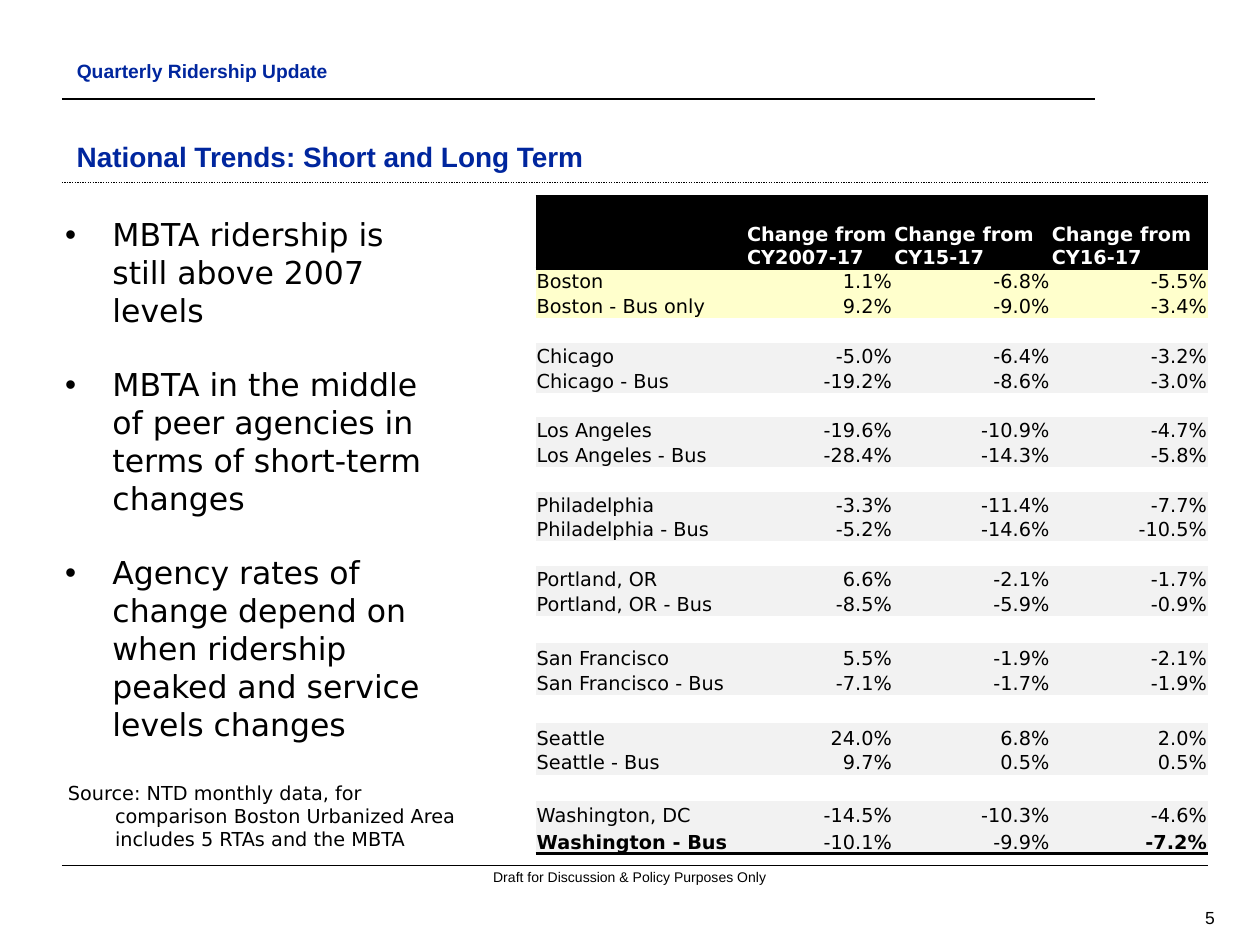
from lxml.etree import SubElement
from pptx import Presentation
from pptx.dml.color import RGBColor
from pptx.enum.dml import MSO_LINE
from pptx.enum.shapes import MSO_CONNECTOR
from pptx.enum.text import MSO_ANCHOR, PP_ALIGN
from pptx.oxml.ns import qn
from pptx.util import Pt

BLACK = RGBColor(0x00, 0x00, 0x00)
WHITE = RGBColor(0xFF, 0xFF, 0xFF)
NAVY = RGBColor(0x00, 0x26, 0x9E)
YELLOW = RGBColor(0xFF, 0xFF, 0xCC)
GREY = RGBColor(0xF2, 0xF2, 0xF2)

HEADING_FONT = "Arial"
BODY_FONT = "DejaVu Sans"
NO_STYLE_NO_GRID = "{2D5ABB26-0587-4C30-8999-92F81FD0307C}"

BULLETS = [
    "MBTA ridership is still above 2007 levels",
    "MBTA in the middle of peer agencies in terms of short-term changes",
    "Agency rates of change depend on when ridership peaked and service levels changes",
]
SOURCE = "Source: NTD monthly data, for comparison Boston Urbanized Area includes 5 RTAs and the MBTA"

HEADER = ["", "Change from CY2007-17", "Change from CY15-17", "Change from CY16-17"]
CITIES = [
    [("Boston", "1.1%", "-6.8%", "-5.5%"),
     ("Boston - Bus only", "9.2%", "-9.0%", "-3.4%")],
    [("Chicago", "-5.0%", "-6.4%", "-3.2%"),
     ("Chicago - Bus", "-19.2%", "-8.6%", "-3.0%")],
    [("Los Angeles", "-19.6%", "-10.9%", "-4.7%"),
     ("Los Angeles - Bus", "-28.4%", "-14.3%", "-5.8%")],
    [("Philadelphia", "-3.3%", "-11.4%", "-7.7%"),
     ("Philadelphia - Bus", "-5.2%", "-14.6%", "-10.5%")],
    [("Portland, OR", "6.6%", "-2.1%", "-1.7%"),
     ("Portland, OR - Bus", "-8.5%", "-5.9%", "-0.9%")],
    [("San Francisco", "5.5%", "-1.9%", "-2.1%"),
     ("San Francisco - Bus", "-7.1%", "-1.7%", "-1.9%")],
    [("Seattle", "24.0%", "6.8%", "2.0%"),
     ("Seattle - Bus", "9.7%", "0.5%", "0.5%")],
    [("Washington, DC", "-14.5%", "-10.3%", "-4.6%"),
     ("Washington - Bus", "-10.1%", "-9.9%", "-7.2%")],
]
COLUMN_WIDTHS = [120.2, 84.2, 90, 90]
ROW_HEIGHTS = [41.2] + [14.2] * 14 + [15.6, 15.6, 14.2] * 2 + [15.1] * 3


def write(frame, paragraphs, size, font=BODY_FONT, color=BLACK, bold=False,
          align=PP_ALIGN.LEFT, hanging=0, bullet=None, gap=0):
    """Fill a text frame; hanging and gap are in points."""
    frame.word_wrap = True
    for index, text in enumerate(paragraphs):
        paragraph = frame.paragraphs[0] if index == 0 else frame.add_paragraph()
        paragraph.alignment = align
        if index and gap:
            paragraph.space_before = Pt(gap)
        properties = paragraph._p.get_or_add_pPr()
        if hanging:
            properties.set("marL", str(Pt(hanging)))
            properties.set("indent", str(-Pt(hanging)))
        if bullet:
            SubElement(properties, qn("a:buFont")).set("typeface", HEADING_FONT)
            SubElement(properties, qn("a:buChar")).set("char", bullet)
        if not text:
            SubElement(paragraph._p, qn("a:endParaRPr")).set("sz", str(size * 100))
            continue
        run = paragraph.add_run()
        run.text = text
        run.font.size = Pt(size)
        run.font.name = font
        run.font.bold = bold
        run.font.color.rgb = color


def add_text(slide, box, paragraphs, size, anchor=MSO_ANCHOR.TOP, inset=None, **text_format):
    frame = slide.shapes.add_textbox(*map(Pt, box)).text_frame
    frame.vertical_anchor = anchor
    if inset is not None:
        frame.margin_left = frame.margin_right = Pt(inset)
        frame.margin_top = frame.margin_bottom = Pt(inset)
    write(frame, paragraphs, size, **text_format)


def add_rule(slide, left, right, y, weight, dash=None):
    rule = slide.shapes.add_connector(
        MSO_CONNECTOR.STRAIGHT, Pt(left), Pt(y), Pt(right), Pt(y))
    rule.line.color.rgb = BLACK
    rule.line.width = Pt(weight)
    if dash:
        rule.line.dash_style = dash
    SubElement(rule._element.spPr, qn("a:effectLst"))


def add_heading(slide, left, top, width):
    heading = {"font": HEADING_FONT, "color": NAVY, "bold": True}
    add_text(slide, (left + 1.5, top, 245.5, 18), ["Quarterly Ridership Update"], 11, **heading)
    add_rule(slide, left, left + 590.5, top + 26.6, 1)
    add_text(slide, (left + 1.5, top + 35.3, width, 36.7),
             ["National Trends: Short and Long Term"], 16,
             anchor=MSO_ANCHOR.BOTTOM, **heading)
    add_rule(slide, left, left + width, top + 74.2, 0.75, MSO_LINE.ROUND_DOT)


def add_findings(slide, left, top, width):
    add_text(slide, (left, top, width, 334), BULLETS, 18, hanging=27, bullet="•", gap=21)
    add_text(slide, (left + 1.5, top + 323.3, width + 6.5, 47.5), [SOURCE], 11, hanging=27)


def add_cell_border(cell, side):
    border = SubElement(cell._tc.get_or_add_tcPr(), qn(f"a:{side}"), w=str(Pt(2)))
    fill = SubElement(border, qn("a:solidFill"))
    SubElement(fill, qn("a:srgbClr"), val=str(BLACK))


def format_cell(cell, text, fill, borders=(), **text_format):
    cell.margin_left = cell.margin_right = cell.margin_top = Pt(0.7)
    cell.margin_bottom = 0
    cell.vertical_anchor = MSO_ANCHOR.BOTTOM
    for side in borders:
        add_cell_border(cell, side)
    cell.fill.solid()
    cell.fill.fore_color.rgb = fill
    write(cell.text_frame, [text], 11, **text_format)


def city_rows():
    """List (values, fill) for each row, with a blank row between cities."""
    rows = []
    for index, city in enumerate(CITIES):
        if index:
            rows.append(([""] * len(HEADER), WHITE))
        rows += [(values, GREY if index else YELLOW) for values in city]
    return rows


def add_ridership_table(slide, left, top):
    table = slide.shapes.add_table(
        len(ROW_HEIGHTS), len(COLUMN_WIDTHS), Pt(left), Pt(top),
        Pt(sum(COLUMN_WIDTHS)), Pt(sum(ROW_HEIGHTS))).table
    table.horz_banding = False
    table._tbl.tblPr.find(qn("a:tableStyleId")).text = NO_STYLE_NO_GRID
    for column, width in zip(table.columns, COLUMN_WIDTHS):
        column.width = Pt(width)
    for row, height in zip(table.rows, ROW_HEIGHTS):
        row.height = Pt(height)

    for column, title in enumerate(HEADER):
        format_cell(table.cell(0, column), title, BLACK, borders=("lnT", "lnB"),
                    color=WHITE, bold=True)
    last_row = len(ROW_HEIGHTS) - 1
    last_column = len(HEADER) - 1
    for row, (values, fill) in enumerate(city_rows(), start=1):
        is_last = row == last_row
        for column, value in enumerate(values):
            format_cell(table.cell(row, column), value, fill,
                        borders=("lnB",) if is_last else (),
                        bold=is_last and column in (0, last_column),
                        align=PP_ALIGN.RIGHT if column else PP_ALIGN.LEFT)


def add_footer(slide, left, top, width):
    add_rule(slide, left, left + width, top, 0.75)
    add_text(slide, (257, top + 1.5, 206, 9.4), ["Draft for Discussion & Policy Purposes Only"], 8,
             inset=0, font=HEADING_FONT, align=PP_ALIGN.CENTER)
    add_text(slide, (641.5, top + 20.9, 59.8, 18), ["5"], 10, anchor=MSO_ANCHOR.MIDDLE,
             font=HEADING_FONT, align=PP_ALIGN.RIGHT)


def main():
    presentation = Presentation()
    presentation.slide_width = Pt(720)
    presentation.slide_height = Pt(540)
    slide = presentation.slides.add_slide(presentation.slide_layouts[6])
    add_heading(slide, 35.3, 30.2, 655.2)
    add_findings(slide, 30.2, 119.5, 233.3)
    add_ridership_table(slide, 306, 112.3)
    add_footer(slide, 35.3, 494.6, 655.2)
    presentation.save("out.pptx")


if __name__ == "__main__":
    main()
